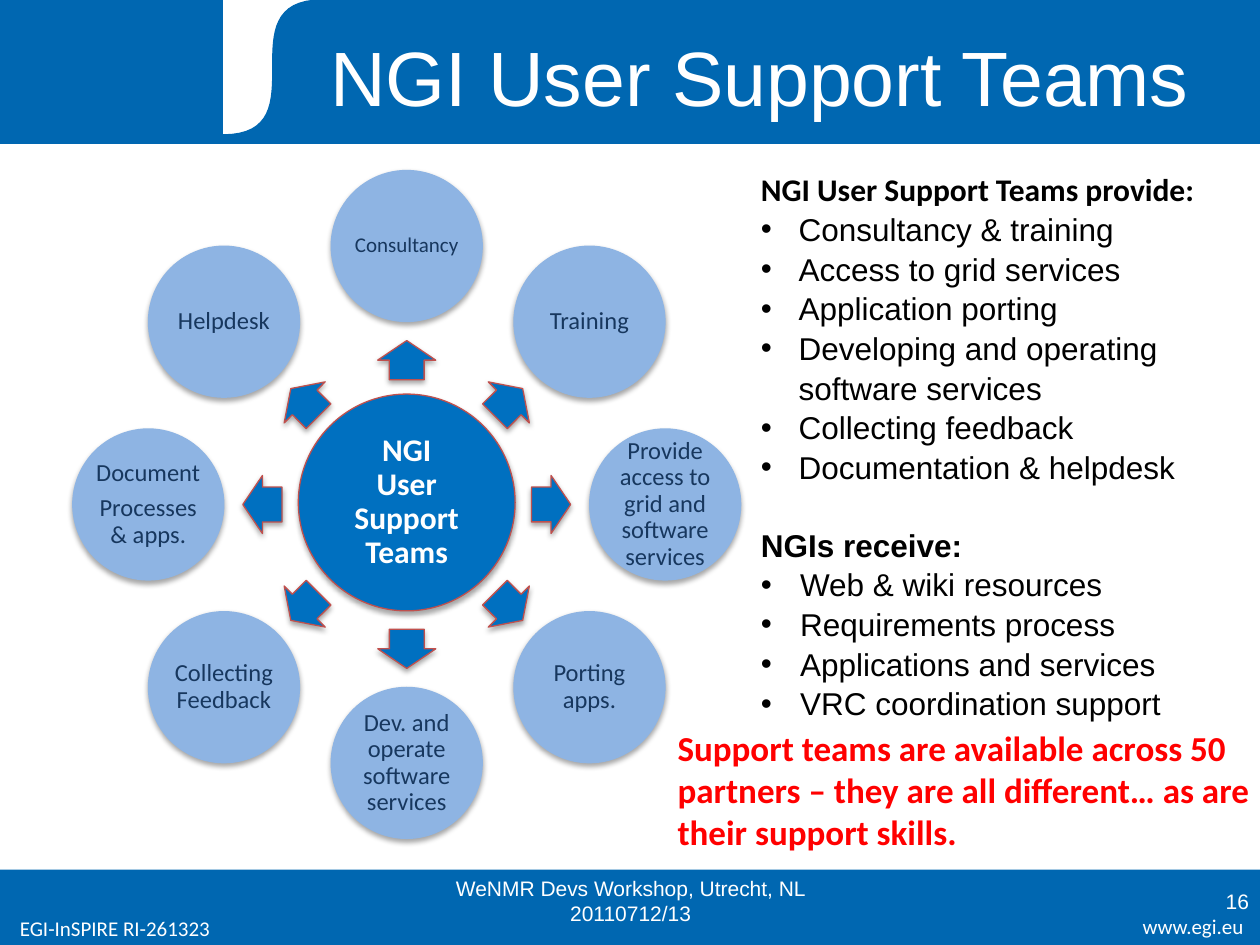
from math import cos, radians, sin

from lxml.etree import SubElement
from pptx import Presentation
from pptx.dml.color import RGBColor
from pptx.enum.shapes import MSO_SHAPE as Preset
from pptx.enum.text import MSO_ANCHOR as Anchor, PP_ALIGN as Align
from pptx.oxml.ns import qn
from pptx.util import Cm, Pt

BAND, HUB, HUB_EDGE = "0067B1", "0070C0", "C0504D"
BUBBLE, BUBBLE_TEXT = "8EB4E3", "17375E"
WHITE, BLACK, RED = "FFFFFF", "000000", "FF0000"

HUB_TEXT = "NGI\vUser Support Teams"
# Clockwise from the top: paragraphs and text size
SERVICES = [
    (["Consultancy"], 12),
    (["Training"], 14),
    (["Provide access to grid and software services"], 14),
    (["Porting apps."], 14),
    (["Dev. and operate software services"], 14),
    (["Collecting Feedback"], 14),
    (["Document", "Processes & apps."], 14),
    (["Helpdesk"], 14),
]
# Heading, heading format, bullet indent in cm, bullet items
LISTS = [
    ("NGI User Support Teams provide:", {"name": "Calibri", "spacing": 1.25}, 0.76,
     ["Consultancy & training", "Access to grid services", "Application porting",
      "Developing and operating software services", "Collecting feedback",
      "Documentation & helpdesk"]),
    ("NGIs receive:", {"name": "Arial", "spacing": 1.05, "before": 21.6}, 0.79,
     ["Web & wiki resources", "Requirements process", "Applications and services",
      "VRC coordination support"]),
]
WHITE_ARIAL = {"name": "Arial", "color": WHITE}
WHITE_CALIBRI = {"name": "Calibri", "color": WHITE, "size": 12}
# Text, box (left, top, width, height in cm), anchor, format
TEXTS = [
    ("www.egi.eu", (21.31, 18.29, 4.01, 0.78), Anchor.TOP,
     {**WHITE_CALIBRI, "align": Align.RIGHT}),
    ("EGI-InSPIRE RI-261323", (0.15, 18.34, 6.35, 0.78), Anchor.TOP, WHITE_CALIBRI),
    ("NGI User Support Teams", (5.31, 0.33, 20.02, 2.41), Anchor.MIDDLE,
     {**WHITE_ARIAL, "size": 44, "align": Align.CENTER}),
    ("WeNMR Devs Workshop, Utrecht, NL 20110712/13", (8.69, 17.65, 8.05, 1.02),
     Anchor.MIDDLE, {**WHITE_ARIAL, "size": 12, "align": Align.CENTER}),
    ("16", (19.51, 17.65, 5.92, 1.02), Anchor.MIDDLE,
     {**WHITE_ARIAL, "size": 12, "align": Align.RIGHT}),
    ("Support teams are available across 50 partners – they are all different… "
     "as are their support skills.", (13.41, 14.53, 12.5, 2.82), Anchor.TOP,
     {"name": "Calibri", "color": RED, "size": 20, "bold": True}),
]
LIST_BOX = (15.09, 3.12, 10.01, 11.23)

RING_CENTER, HUB_CENTER = (8.2, 10.17), (8.2, 10.13)
BUBBLE_RADIUS, ARROW_RADIUS = 5.21, 2.91
BUBBLE_SIZE, HUB_SIZE, ARROW_SIZE = (3.07, 3.07), (4.37, 4.37), (0.79, 1.17)

presentation = Presentation()
presentation.slide_width, presentation.slide_height = Cm(25.4), Cm(19.05)
slide = presentation.slides.add_slide(presentation.slide_layouts[6])


def rgb(color):
    return RGBColor.from_string(color)


def paint(shape, fill, line=None):
    shape.shadow.inherit = False
    shape.fill.solid()
    shape.fill.fore_color.rgb = rgb(fill)
    if line:
        shape.line.color.rgb = rgb(line)
        shape.line.width = Pt(0.75)
    else:
        shape.line.fill.background()
    return shape


def add_preset(kind, box, fill, line=None):
    return paint(slide.shapes.add_shape(kind, *map(Cm, box)), fill, line)


def add_centered(kind, center, size, fill, line=None):
    """Add a preset shape around its center, with a soft shadow below."""
    corner = [middle - length / 2 for middle, length in zip(center, size)]
    shape = add_preset(kind, (*corner, *size), fill, line)
    effects = shape._element.spPr.find(qn("a:effectLst"))
    shadow = SubElement(effects, qn("a:outerShdw"), blurRad=str(Pt(3.1)),
                        dist=str(Pt(1.8)), dir="5400000", rotWithShape="0")
    color = SubElement(shadow, qn("a:srgbClr"), val=BLACK)
    SubElement(color, qn("a:alpha"), val="35000")
    return shape


def prepare_frame(shape, anchor, inset=None):
    frame = shape.text_frame
    frame.word_wrap = True
    frame.vertical_anchor = anchor
    if inset is not None:
        for side in ("left", "top", "right", "bottom"):
            setattr(frame, f"margin_{side}", Cm(inset))
    return frame


def write(frame, text, style, bullet_indent=None):
    """Append a paragraph, using the empty first one when it is free."""
    paragraph = frame.paragraphs[0]
    if paragraph.runs:
        paragraph = frame.add_paragraph()
    paragraph.text = text
    if bullet_indent:
        properties = paragraph._p.get_or_add_pPr()
        properties.set("marL", str(Cm(bullet_indent)))
        properties.set("indent", str(-Cm(bullet_indent)))
        SubElement(properties, qn("a:buFont"), typeface="Arial")
        SubElement(properties, qn("a:buChar"), char="•")
    formats = {
        "alignment": style.get("align", Align.LEFT),
        "line_spacing": style.get("spacing"),
        "space_before": Pt(style["before"]) if "before" in style else None,
        "space_after": Pt(style["after"]) if "after" in style else None,
    }
    for name, value in formats.items():
        if value is not None:
            setattr(paragraph, name, value)
    for run in paragraph.runs:
        run.font.name = style["name"]
        run.font.size = Pt(style["size"])
        run.font.bold = style.get("bold", False)
        run.font.color.rgb = rgb(style["color"])


def bezier(points, steps=32):
    """Sample a cubic curve."""
    for step in range(1, steps + 1):
        t = step / steps
        weights = ((1 - t) ** 3, 3 * t * (1 - t) ** 2, 3 * t * t * (1 - t), t ** 3)
        yield tuple(sum(w * point[axis] for w, point in zip(weights, points))
                    for axis in (0, 1))


# Header and footer bands
add_preset(Preset.RECTANGLE, (0, 17.53, 25.4, 1.52), BAND)
add_preset(Preset.RECTANGLE, (0, 0, 25.4, 2.9), BAND, BAND)
left, right, bend, base = 4.5, 9.5, 6.5, 2.72
add_preset(Preset.RECTANGLE, (left, 0, right - left, base), WHITE, WHITE)
curve = bezier([(left, base), (bend, base), (left, 0), (bend, 0)])
outline = [(right, base), (left, base), *curve]
builder = slide.shapes.build_freeform(Cm(right), 0, scale=1.0)
builder.add_line_segments([(Cm(x), Cm(y)) for x, y in outline], close=True)
paint(builder.convert_to_shape(), BAND, BAND)

# Hub with a ring of services
diagram_style = {"name": "Calibri", "align": Align.CENTER, "spacing": 0.9}
hub = add_centered(Preset.OVAL, HUB_CENTER, HUB_SIZE, HUB, HUB_EDGE)
write(prepare_frame(hub, Anchor.MIDDLE, 0.08), HUB_TEXT,
      {**diagram_style, "size": 18, "color": WHITE, "bold": True})

for index, (lines, size) in enumerate(SERVICES):
    angle = index * 360 / len(SERVICES) - 90
    direction = cos(radians(angle)), sin(radians(angle))
    arrow_center, bubble_center = (
        [middle + radius * part for middle, part in zip(RING_CENTER, direction)]
        for radius in (ARROW_RADIUS, BUBBLE_RADIUS))
    arrow = add_centered(Preset.RIGHT_ARROW, arrow_center, ARROW_SIZE, HUB, HUB_EDGE)
    arrow.adjustments[0], arrow.adjustments[1] = 0.6, 0.5
    arrow.rotation = angle % 360
    bubble = add_centered(Preset.OVAL, bubble_center, BUBBLE_SIZE, BUBBLE)
    frame = prepare_frame(bubble, Anchor.MIDDLE, 0)
    for line in lines:
        write(frame, line, {**diagram_style, "size": size, "color": BUBBLE_TEXT,
                            "after": 0.35 * size})

# Text boxes
for text, box, anchor, style in TEXTS:
    write(prepare_frame(slide.shapes.add_textbox(*map(Cm, box)), anchor), text, style)

frame = prepare_frame(slide.shapes.add_textbox(*map(Cm, LIST_BOX)), Anchor.TOP)
list_style = {"name": "Arial", "size": 18, "color": BLACK, "spacing": 1.05}
for heading, heading_style, indent, items in LISTS:
    write(frame, heading, {**list_style, **heading_style, "bold": True})
    for item in items:
        write(frame, item, list_style, indent)

presentation.save("out.pptx")
